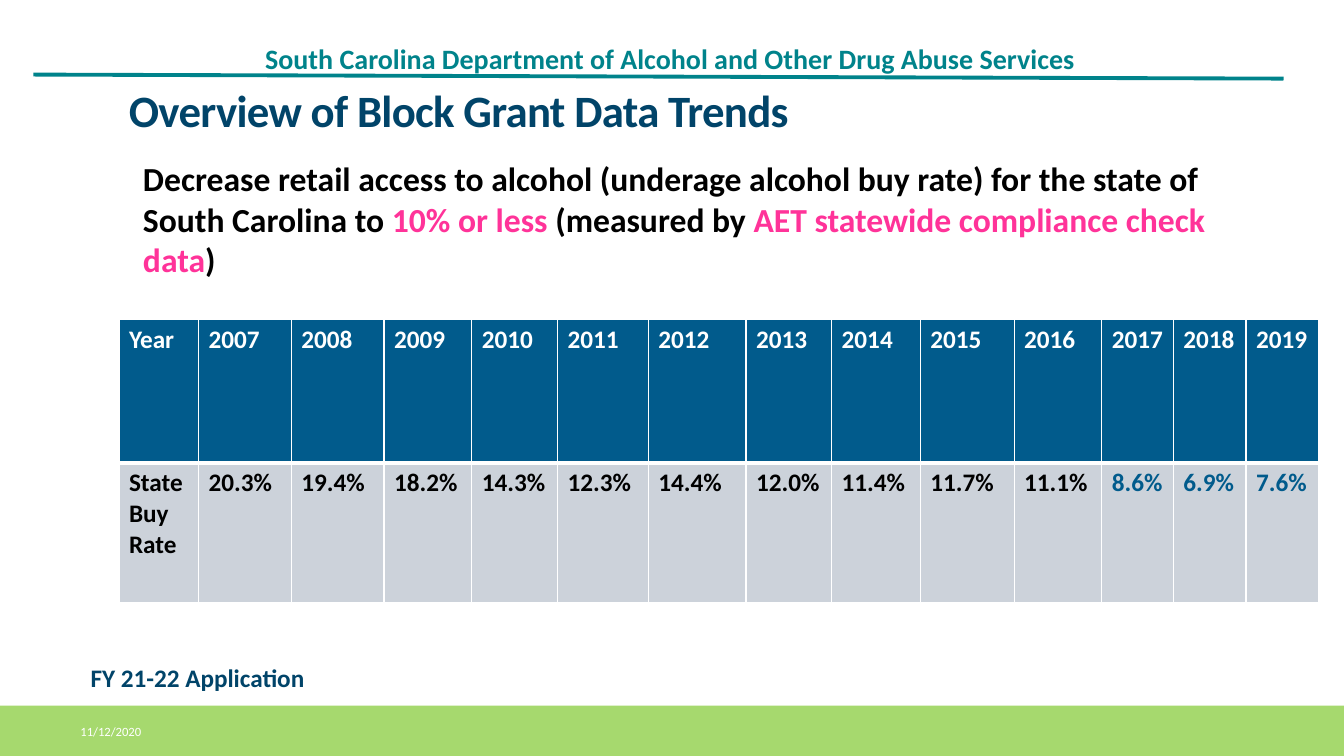
"""Build the slide on South Carolina's underage alcohol buy rate."""
import pptx
import pptx.dml.color
import pptx.enum.shapes
import pptx.enum.text
import pptx.oxml
import pptx.util
from pptx.util import Inches

INK = {"teal": "00838B", "green": "A6D96E", "navy": "014469", "blue": "015B8C",
       "grey": "CCD2DA", "pink": "FF3399", "black": "000000", "white": "FFFFFF"}
MID = pptx.enum.text.MSO_ANCHOR.MIDDLE
RATES = ["20.3%", "19.4%", "18.2%", "14.3%", "12.3%", "14.4%", "12.0%",
         "11.4%", "11.7%", "11.1%", "8.6%", "6.9%", "7.6%"]
WIDTHS = [0.79, 0.92, 0.92, 0.87, 0.85, 0.9, 0.97,
          0.85, 0.88, 0.93, 0.87, 0.71, 0.72, 0.72]
GOAL = [("Decrease retail access to alcohol (underage alcohol buy rate) "
         "for the state of South Carolina to ", "black"),
        ("10% or less ", "pink"), ("(measured by ", "black"),
        ("AET statewide compliance check data", "pink"), (")", "black")]


def rgb(name):
    """Return a named colour."""
    return pptx.dml.color.RGBColor.from_string(INK[name])


def style(font, size, color, bold=True):
    """Set the look of a font."""
    font.name = "Calibri"
    font.size = pptx.util.Pt(size)
    font.bold = bold
    font.color.rgb = rgb(color)


def add_text(slide, place, parts, size, bold=True, anchor=None, space=None, wrap=True):
    """Add a one-paragraph text box made of (text, colour) parts."""
    box = slide.shapes.add_textbox(*map(Inches, place))
    frame = box.text_frame
    frame.word_wrap = wrap
    if anchor is not None:
        frame.vertical_anchor = anchor
    para = frame.paragraphs[0]
    style(para.font, size, parts[0][1], bold)
    if space:
        para.line_spacing = space
    for text, color in parts:
        run = para.add_run()
        run.text = text
        if len(parts) > 1:
            run.font.color.rgb = rgb(color)
    return box


def add_rule(slide, start, end):
    """Add the teal line under the agency name."""
    line = slide.shapes.add_connector(
        pptx.enum.shapes.MSO_CONNECTOR.STRAIGHT, *map(Inches, start + end))
    line.line.color.rgb = rgb("teal")
    line.line.width = pptx.util.Pt(2.75)
    line._element.spPr.append(pptx.oxml.parse_xml(
        '<a:effectLst xmlns:a="http://schemas.openxmlformats.org/drawingml/2006/main"/>'))


def add_band(slide):
    """Add the green band at the foot."""
    band = slide.shapes.add_shape(pptx.enum.shapes.MSO_SHAPE.RECTANGLE,
                                  0, Inches(7), Inches(13.33), Inches(0.5))
    band.shadow.inherit = False
    band.fill.solid()
    band.fill.fore_color.rgb = rgb("green")
    band.line.fill.background()


def edge(cell, **widths):
    """Draw white borders of the given point widths on a cell."""
    props = cell._tc.get_or_add_tcPr()
    for side, width in widths.items():
        props.append(pptx.oxml.parse_xml(
            '<a:ln%s xmlns:a="http://schemas.openxmlformats.org/drawingml/2006/main" '
            'w="%d"><a:solidFill><a:srgbClr val="%s"/></a:solidFill></a:ln%s>'
            % (side, pptx.util.Pt(width), INK["white"], side)))


def add_rates(slide):
    """Add the table of buy rates by year."""
    rows = [["Year"] + [str(year) for year in range(2007, 2020)],
            ["State Buy Rate"] + RATES]
    table = slide.shapes.add_table(2, len(WIDTHS), Inches(1.18), Inches(3.17),
                                   Inches(11.89), Inches(2.81)).table
    for col, width in zip(table.columns, WIDTHS):
        col.width = Inches(width)
    for row, height in zip(table.rows, (1.42, 1.39)):
        row.height = Inches(height)
    for r, row in enumerate(rows):
        for c, text in enumerate(row):
            cell = table.cell(r, c)
            edge(cell, L=1, R=1, T=3 if r else 1, B=1 if r else 3)
            cell.fill.solid()
            cell.fill.fore_color.rgb = rgb("grey" if r else "blue")
            cell.text = text
            color = "white" if r == 0 else "blue" if c > 10 else "black"
            style(cell.text_frame.paragraphs[0].font, 18, color)


def main():
    """Build and save the slide."""
    deck = pptx.Presentation()
    deck.slide_width, deck.slide_height = Inches(13.33), Inches(7.5)
    slide = deck.slides.add_slide(deck.slide_layouts[6])
    agency = add_text(
        slide, (2.56, 0.28, 10.21, 0.63),
        [("South Carolina Department of Alcohol and Other Drug Abuse Services", "teal")],
        20, anchor=MID, space=0.9)
    frame = agency.text_frame
    frame.margin_left = frame.margin_right = Inches(0.07)
    frame.margin_top = frame.margin_bottom = Inches(0.04)
    add_rule(slide, (0.33, 0.74), (12.73, 0.78))
    add_band(slide)
    add_text(slide, (0.7, 7.06, 2.7, 0.4), [("11/12/2020", "white")], 9,
             bold=False, anchor=MID)
    title = add_text(slide, (1.18, 0.85, 11, 0.67),
                     [("Overview of Block Grant Data Trends", "navy")], 32, space=0.85)
    run = title.text_frame.paragraphs[0].runs[0]
    run._r.get_or_add_rPr().set("spc", "-50")
    add_rates(slide)
    add_text(slide, (1.32, 1.52, 11, 1.88), GOAL, 24)
    add_text(slide, (0.8, 6.52, 2.34, 0.4), [("FY 21-22 Application", "navy")], 18,
             wrap=False)
    deck.save("out.pptx")


if __name__ == "__main__":
    main()
